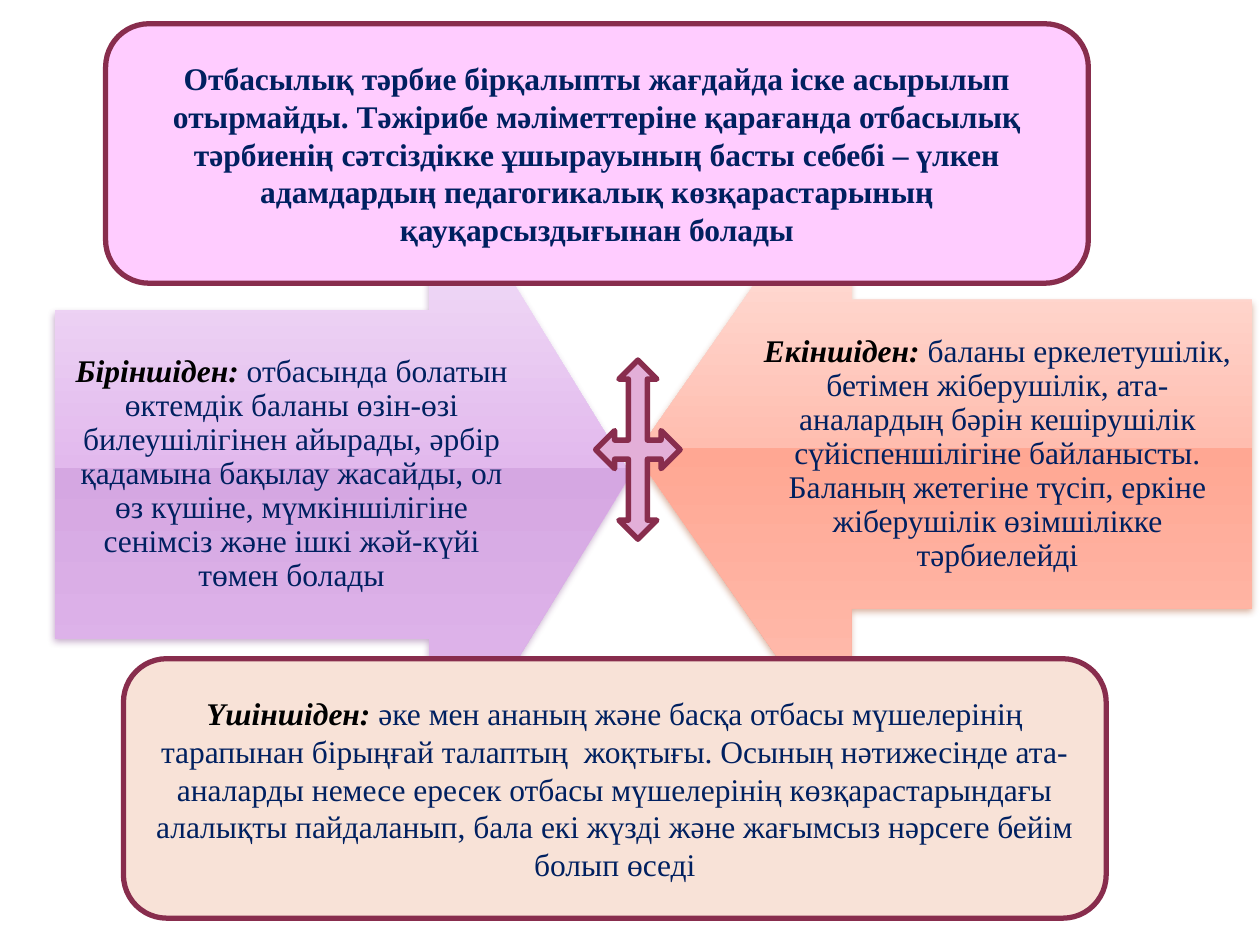
import pptx
import pptx.util
import pptx.dml.color
import pptx.enum.shapes
import pptx.enum.text
import pptx.oxml

Cm, Pt = pptx.util.Cm, pptx.util.Pt
RGBColor = pptx.dml.color.RGBColor
MSO_SHAPE = pptx.enum.shapes.MSO_SHAPE

NAVY = RGBColor(0x00, 0x20, 0x60)
BLACK = RGBColor(0x00, 0x00, 0x00)
WINE = RGBColor(0x88, 0x2D, 0x4D)
PINK = RGBColor(0xFF, 0xCC, 0xFF)
PEACH = RGBColor(0xF8, 0xE2, 0xD7)
MAUVE = RGBColor(0xE3, 0xAF, 0xD8)
LILAC_STOPS = [RGBColor(0xF7, 0xEB, 0xFB), RGBColor(0xE2, 0xB9, 0xED), RGBColor(0xD5, 0xA7, 0xE2),
               RGBColor(0xE2, 0xB9, 0xED), RGBColor(0xE6, 0xC6, 0xEF)]
CORAL_STOPS = [RGBColor(0xFF, 0xED, 0xEA), RGBColor(0xFF, 0xBD, 0xAF), RGBColor(0xFF, 0xA7, 0x93),
               RGBColor(0xFF, 0xBD, 0xAF), RGBColor(0xFF, 0xC8, 0xBC)]
LILAC_SHADOW = RGBColor(0x6E, 0x30, 0x7B)
CORAL_SHADOW = RGBColor(0x9C, 0x37, 0x07)
STOP_POSITIONS = [0, 49, 49, 92, 100]
NS = 'xmlns:a="http://schemas.openxmlformats.org/drawingml/2006/main"'

LEAD = {"size": Pt(18), "name": "Times New Roman", "bold": True, "italic": True}
BODY = {"size": Pt(18), "name": "Times New Roman", "bold": False, "italic": False}
HEADING = {**BODY, "bold": True}

presentation = pptx.Presentation()
presentation.slide_width, presentation.slide_height = Cm(25.4), Cm(19.05)
slide = presentation.slides.add_slide(presentation.slide_layouts[6])


def write_centred(holder, runs):
    """Fill a shape with one centred paragraph of (text, format, colour) runs."""
    frame = holder.text_frame
    frame.word_wrap = True
    frame.vertical_anchor = pptx.enum.text.MSO_ANCHOR.MIDDLE
    paragraph = frame.paragraphs[0]
    paragraph.alignment = pptx.enum.text.PP_ALIGN.CENTER
    for text, style, colour in runs:
        run = paragraph.add_run()
        run.text = text
        for attribute, value in style.items():
            setattr(run.font, attribute, value)
        run.font.color.rgb = colour
    return frame


def add_outlined(kind, box, fill, line_width):
    outlined = slide.shapes.add_shape(kind, *map(Cm, box))
    outlined.shadow.inherit = False
    outlined.fill.solid()
    outlined.fill.fore_color.rgb = fill
    outlined.line.color.rgb = WINE
    outlined.line.width = Pt(line_width)
    return outlined


# Two opposing reasons: a turned block arrow with its text over it
reasons = [
    ((0.28, 3.76, 13.26, 11.61), 270, LILAC_STOPS, LILAC_SHADOW, (1.09, 6.25, 9.58, 6.63), "Біріншіден: ",
     "отбасында болатын өктемдік баланы өзін-өзі билеушілігінен айырады, әрбір қадамына бақылау "
     "жасайды, ол өз күшіне, мүмкіншілігіне сенімсіз және ішкі жәй-күйі төмен болады"),
    ((12.8, 2.95, 12.45, 12.42), 90, CORAL_STOPS, CORAL_SHADOW, (14.99, 6.05, 10.24, 6.22), "Екіншіден: ",
     "баланы еркелетушілік, бетімен жіберушілік, ата-аналардың бәрін кешірушілік сүйіспеншілігіне "
     "байланысты. Баланың жетегіне түсіп, еркіне жіберушілік өзімшілікке тәрбиелейді"),
]
for arrow_box, rotation, stops, shadow, text_box, lead, body in reasons:
    arrow = slide.shapes.add_shape(MSO_SHAPE.DOWN_ARROW, *map(Cm, arrow_box))
    arrow.rotation = rotation
    arrow.adjustments[0], arrow.adjustments[1] = 0.5, 0.35
    arrow.line.fill.background()
    stop_xml = "".join(f'<a:gs pos="{position * 1000}"><a:srgbClr val="{colour}"/></a:gs>'
                       for position, colour in zip(STOP_POSITIONS, stops))
    outline = arrow.line._get_or_add_ln()
    outline.addprevious(pptx.oxml.parse_xml(
        f'<a:gradFill {NS} rotWithShape="0"><a:gsLst>{stop_xml}</a:gsLst>'
        '<a:lin ang="5400000" scaled="0"/></a:gradFill>'))
    outline.addnext(pptx.oxml.parse_xml(
        f'<a:effectLst {NS}><a:outerShdw blurRad="50800" dist="25400" dir="5400000" rotWithShape="0">'
        f'<a:srgbClr val="{shadow}"><a:alpha val="38000"/></a:srgbClr></a:outerShdw></a:effectLst>'))

    reason = slide.shapes.add_textbox(*map(Cm, text_box))
    frame = write_centred(reason, [(lead, LEAD, BLACK), (body, BODY, NAVY)])
    for side in ("left", "top", "right", "bottom"):
        setattr(frame, f"margin_{side}", Cm(0.36))
    frame.paragraphs[0].line_spacing = 0.9
    frame.paragraphs[0].space_after = Pt(6.3)

third_reason = add_outlined(MSO_SHAPE.ROUNDED_RECTANGLE, (2.49, 13.28, 19.81, 5.23), PEACH, 3)
write_centred(third_reason, [
    ("Үшіншіден: ", LEAD, BLACK),
    ("әке мен ананың және басқа отбасы мүшелерінің тарапынан бірыңғай талаптың  жоқтығы. Осының "
     "нәтижесінде ата-аналарды немесе ересек отбасы мүшелерінің көзқарастарындағы алалықты "
     "пайдаланып, бала екі жүзді және жағымсыз нәрсеге бейім болып өседі", BODY, NAVY)])

add_outlined(MSO_SHAPE.QUAD_ARROW, (12.01, 7.26, 1.7, 3.61), MAUVE, 3.15)

main_cause = add_outlined(MSO_SHAPE.ROUNDED_RECTANGLE, (2.13, 0.48, 19.81, 5.23), PINK, 3)
write_centred(main_cause, [
    ("Отбасылық тәрбие бірқалыпты жағдайда іске асырылып отырмайды. Тәжірибе мәліметтеріне "
     "қарағанда отбасылық тәрбиенің сәтсіздікке ұшырауының басты себебі – үлкен адамдардың "
     "педагогикалық көзқарастарының қауқарсыздығынан болады", HEADING, NAVY)])

presentation.save("out.pptx")
